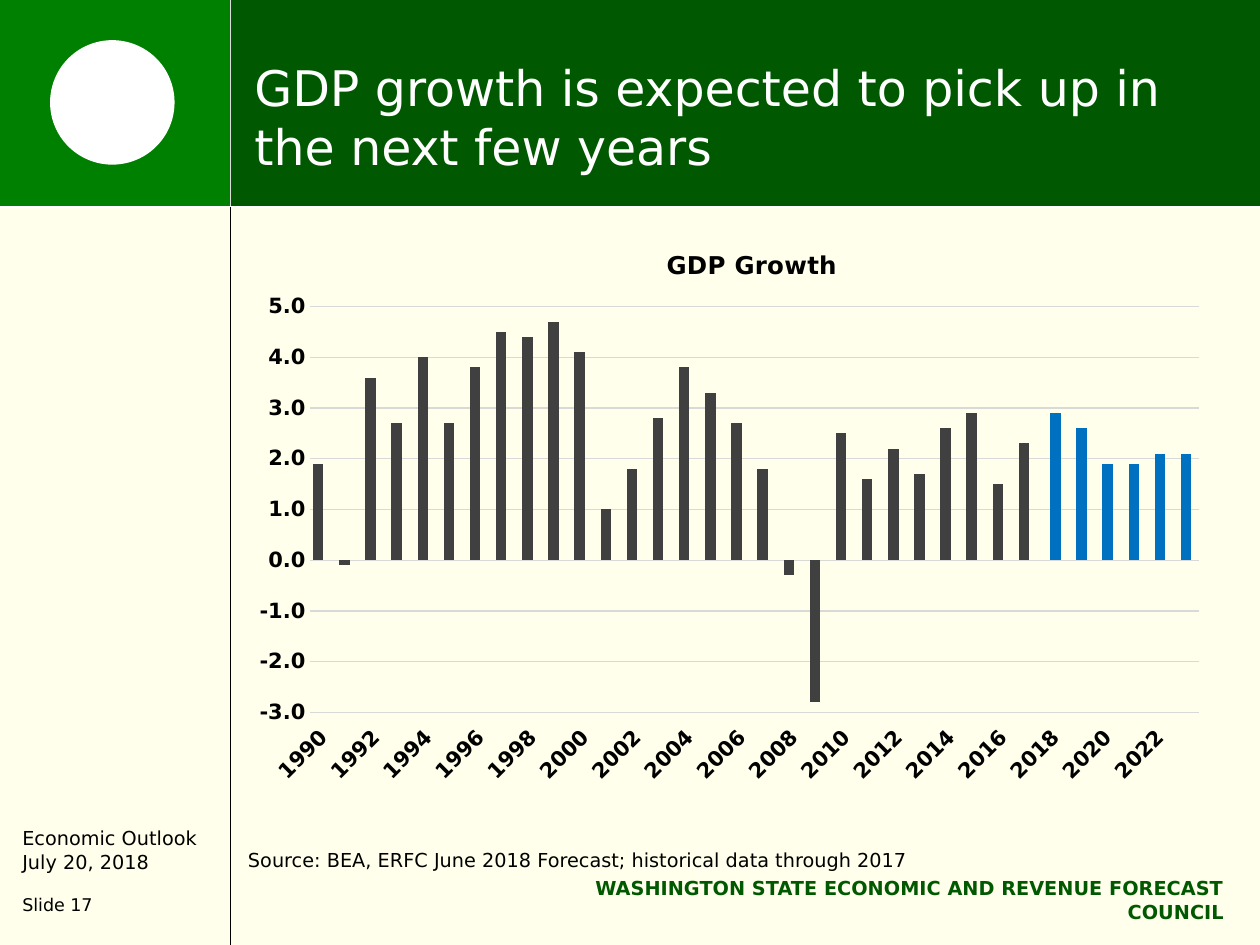
from lxml import etree
from pptx import Presentation
from pptx.chart.data import CategoryChartData
from pptx.dml.color import RGBColor
from pptx.enum.chart import XL_CHART_TYPE as ChartType, XL_TICK_LABEL_POSITION as LabelPosition
from pptx.enum.chart import XL_TICK_MARK as TickMark
from pptx.enum.shapes import MSO_CONNECTOR as Connector, MSO_SHAPE as Shape
from pptx.enum.text import MSO_ANCHOR as Anchor, PP_ALIGN as Align
from pptx.oxml import parse_xml
from pptx.oxml.ns import nsdecls, qn
from pptx.util import Cm, Pt

FONT = "DejaVu Sans"
COLORS = {
    "cream": "FFFFEB", "dark_green": "005800", "green": "008000",
    "white": "FFFFFF", "black": "000000", "pale": "DDDDDD", "grid": "D9D9D9",
    "history": "404040", "forecast": "0070C0", "spare": "9BBB59",
}


def style(font, size, color="black", bold=False):
    font.name = FONT
    font.size = Pt(size)
    font.bold = bold
    font.color.rgb = RGBColor.from_string(COLORS[color])


def add_text(place, lines, color="black", bold=False, align=Align.LEFT, anchor=Anchor.TOP):
    box = slide.shapes.add_textbox(*map(Cm, place))
    frame = box.text_frame
    frame.word_wrap = True
    frame.vertical_anchor = anchor
    for index, (text, size, before) in enumerate(lines):
        para = frame.add_paragraph() if index else frame.paragraphs[0]
        para.alignment = align
        para.space_before = Pt(before)
        span = para.add_run()
        span.text = text
        style(span.font, size, color, bold)


deck = Presentation()
deck.slide_width, deck.slide_height = Cm(25.4), Cm(19.05)
slide = deck.slides.add_slide(deck.slide_layouts[6])
slide.background.fill.solid()
slide.background.fill.fore_color.rgb = RGBColor.from_string(COLORS["cream"])

for kind, place, color in [
    (Shape.RECTANGLE, (4.62, 0, 20.78, 4.17), "dark_green"),
    (Shape.RECTANGLE, (0, 0, 4.65, 4.17), "green"),
    (Shape.OVAL, (1.01, 0.81, 2.51, 2.51), "white"),
]:
    shape = slide.shapes.add_shape(kind, *map(Cm, place))
    shape.shadow.inherit = False
    shape.fill.solid()
    shape.fill.fore_color.rgb = RGBColor.from_string(COLORS[color])
    shape.line.fill.background()

for ends, color in [
    ((4.65, 0, 4.65, 19.05), "pale"),
    ((0, 4.17, 25.4, 4.17), "white"),
    ((4.65, 4.17, 4.65, 19.05), "black"),
]:
    rule = slide.shapes.add_connector(Connector.STRAIGHT, *map(Cm, ends))
    rule.line.color.rgb = RGBColor.from_string(COLORS[color])
    rule.line.width = Pt(0.75)
    etree.SubElement(rule._element.spPr, qn("a:effectLst"))

add_text((4.88, 0.76, 19.48, 3.18),
         [("GDP growth is expected to pick up in the next few years", 28, 0)],
         color="white", anchor=Anchor.MIDDLE)
add_text((0.2, 16.54, 4.6, 2.06),
         [("Economic Outlook", 11, 0), ("July 20, 2018", 11, 0), ("Slide 17", 10, 12)])
add_text((9.68, 17.55, 15.24, 0.75),
         [("WASHINGTON STATE ECONOMIC AND REVENUE FORECAST COUNCIL", 11, 0)],
         color="dark_green", bold=True, align=Align.RIGHT)
add_text((4.75, 16.97, 15.37, 0.74),
         [("Source: BEA, ERFC June 2018 Forecast; historical data through 2017", 11, 0)])

history = [1.9, -0.1, 3.6, 2.7, 4.0, 2.7, 3.8, 4.5, 4.4, 4.7, 4.1, 1.0, 1.8, 2.8,
           3.8, 3.3, 2.7, 1.8, -0.3, -2.8, 2.5, 1.6, 2.2, 1.7, 2.6, 2.9, 1.5, 2.3]
forecast = [2.9, 2.6, 1.9, 1.9, 2.1, 2.1]
data = CategoryChartData(number_format="0.0")
data.categories = [str(year) for year in range(1990, 2024)]
data.add_series("Series 1", history + [None] * len(forecast))
data.add_series("Series 2", [None] * len(history) + forecast)
data.add_series("Series 3", [None] * len(history + forecast))
chart = slide.shapes.add_chart(
    ChartType.COLUMN_CLUSTERED, Cm(4.88), Cm(4.45), Cm(19.69), Cm(11.53), data).chart
style(chart.font, 10, bold=True)
chart.has_legend = False
chart.has_title = True
span = chart.chart_title.text_frame.paragraphs[0].add_run()
span.text = "GDP Growth"
style(span.font, 14, bold=True)

plot = chart.plots[0]
plot.gap_width = 50
plot.overlap = 50
plot.vary_by_categories = False
for series, color in zip(plot.series, ("history", "forecast", "spare")):
    series.invert_if_negative = False
    series.format.fill.solid()
    series.format.fill.fore_color.rgb = RGBColor.from_string(COLORS[color])

years, growth = chart.category_axis, chart.value_axis
for axis in (years, growth):
    axis.major_tick_mark = axis.minor_tick_mark = TickMark.NONE
    style(axis.tick_labels.font, 12, bold=True)
years.tick_label_position = LabelPosition.LOW
growth.minimum_scale, growth.maximum_scale, growth.major_unit = -3, 5, 1
growth.tick_labels.number_format = "0.0"
growth.tick_labels.number_format_is_linked = False
growth.format.line.fill.background()
growth.has_major_gridlines = True
for line in (years.format.line, growth.major_gridlines.format.line):
    line.color.rgb = RGBColor.from_string(COLORS["grid"])
    line.width = Pt(0.75)

years_xml = years._element
years_xml.find(qn("c:txPr")).find(qn("a:bodyPr")).set("rot", "-2700000")
skip = parse_xml(f'<c:tickLblSkip {nsdecls("c")} val="2"/>')
years_xml.find(qn("c:noMultiLvlLbl")).addprevious(skip)

chart_xml = chart._chartSpace.chart
for parent, position, settings in [
    (chart_xml.find(qn("c:title")), 1,
     {"xMode": "edge", "yMode": "edge", "x": 0.43, "y": 0.04}),
    (chart_xml.plotArea, 0,
     {"layoutTarget": "inner", "xMode": "edge", "yMode": "edge",
      "x": 0.07, "y": 0.15, "w": 0.91, "h": 0.71}),
]:
    for old in parent.findall(qn("c:layout")):
        parent.remove(old)
    layout = parse_xml(f'<c:layout {nsdecls("c")}><c:manualLayout/></c:layout>')
    for name, value in settings.items():
        etree.SubElement(layout[0], qn(f"c:{name}")).set("val", str(value))
    parent.insert(position, layout)

deck.save("out.pptx")
